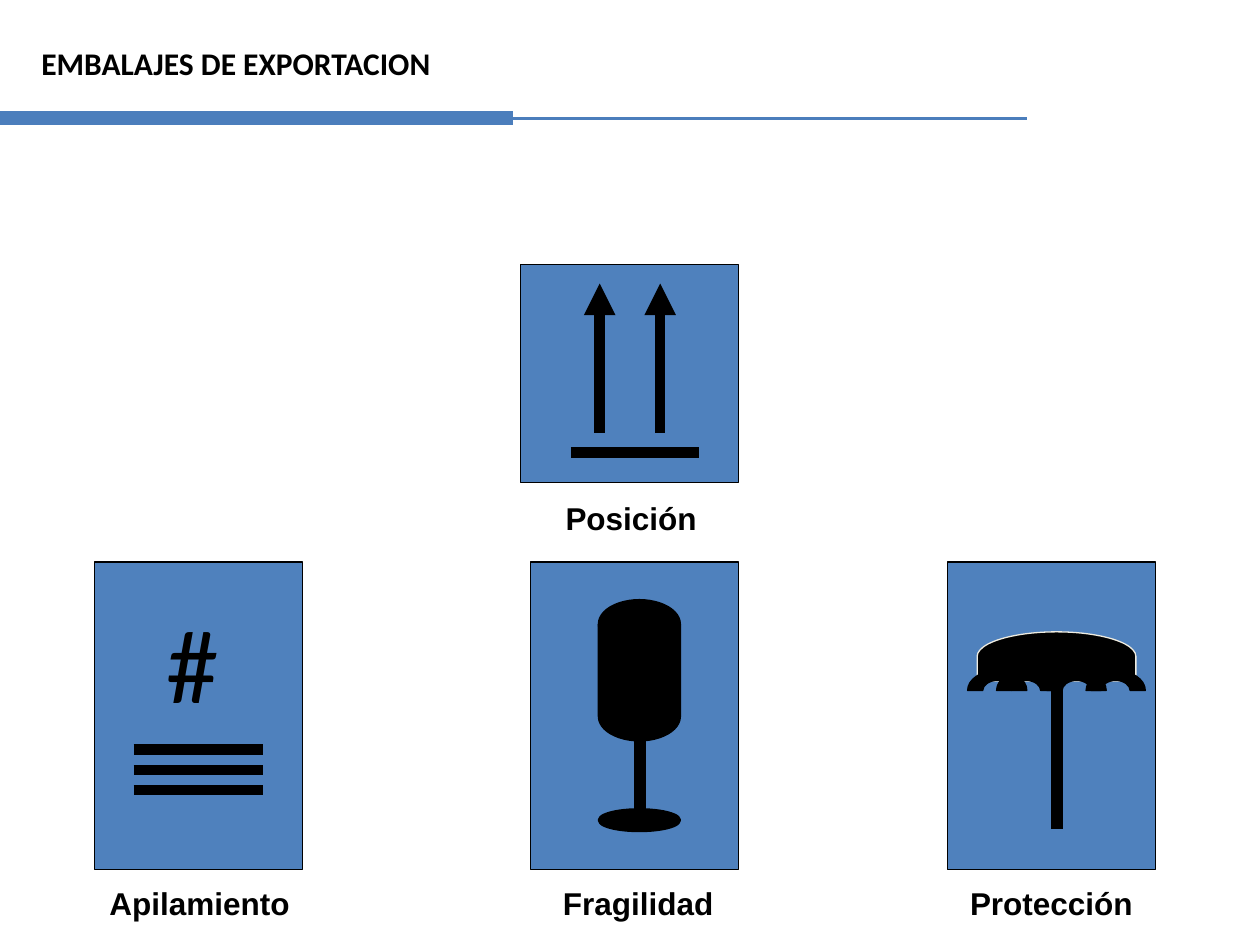
from lxml import etree
from pptx import Presentation
from pptx.dml.color import RGBColor
from pptx.enum import shapes, text
from pptx.oxml import ns
from pptx.util import Inches, Pt

BLACK = RGBColor(0x00, 0x00, 0x00)
PANEL = RGBColor(0x4F, 0x81, 0xBD)
RULE = RGBColor(0x4B, 0x7E, 0xBC)
CREAM = RGBColor(0xEE, 0xEC, 0xE1)
SHAPE = shapes.MSO_SHAPE

# Upper half of an elliptical ring, in hundredths of an inch
SCALLOP = [
    ("moveTo", [(12, 16)]),
    ("cubicBezTo", [(12, 12), (17, 8), (23.5, 8)]),
    ("cubicBezTo", [(30, 8), (35, 12), (35, 16)]),
    ("lnTo", [(47, 16)]),
    ("cubicBezTo", [(47, 7), (36, 0), (23.5, 0)]),
    ("cubicBezTo", [(11, 0), (0, 7), (0, 16)]),
    ("lnTo", [(12, 16)]),
    ("close", []),
]


def style(sp, fill, line, width):
    sp.shadow.inherit = False
    sp.fill.solid()
    sp.fill.fore_color.rgb = fill
    sp.line.color.rgb = line
    sp.line.width = Pt(width)


def add_block(s, kind, x, y, w, h, fill=BLACK, line=BLACK, width=0.75):
    sp = s.shapes.add_shape(kind, Inches(x), Inches(y), Inches(w), Inches(h))
    style(sp, fill, line, width)
    return sp


def add_line(s, x1, y1, x2, y2, width, color=BLACK, arrow=False):
    c = s.shapes.add_connector(shapes.MSO_CONNECTOR.STRAIGHT, Inches(x1),
                               Inches(y1), Inches(x2), Inches(y2))
    c.line.color.rgb = color
    c.line.width = Pt(width)
    if arrow:
        etree.SubElement(c.line._get_or_add_ln(), ns.qn("a:headEnd"), type="triangle")
    etree.SubElement(c._element.spPr, ns.qn("a:effectLst"))


def add_text(s, x, y, w, h, words, size=18, font="Arial", bold=True):
    tb = s.shapes.add_textbox(Inches(x), Inches(y), Inches(w), Inches(h))
    tf = tb.text_frame
    tf.word_wrap = False
    tf.auto_size = text.MSO_AUTO_SIZE.SHAPE_TO_FIT_TEXT
    p = tf.paragraphs[0]
    r = p.add_run()
    r.text = words
    r.font.size = Pt(size)
    r.font.name = font
    r.font.bold = bold
    r.font.color.rgb = BLACK


def add_scallop(s, x, y, w=0.47, h=0.31):
    fb = s.shapes.build_freeform(0, 0, scale=1.0)
    fb.add_line_segments([(Inches(w), 0), (Inches(w), Inches(h))])
    sp = fb.convert_to_shape(Inches(x), Inches(y))
    style(sp, BLACK, BLACK, 0.75)
    # Curved outline in place of the straight segments
    outline = sp._element.find(".//" + ns.qn("a:path"))
    for step in list(outline):
        outline.remove(step)
    for command, points in SCALLOP:
        step = etree.SubElement(outline, ns.qn("a:" + command))
        for px, py in points:
            etree.SubElement(step, ns.qn("a:pt"), x=str(Inches(px / 100)),
                             y=str(Inches(py / 100)))


def header(s, x, y, w):
    add_line(s, x, y + 0.94, x + w, y + 0.94, 1.75, RULE)
    add_line(s, x, y + 0.94, x + w / 2, y + 0.94, 8, RULE)
    add_text(s, x + 0.23, y + 0.3, 3.32, 0.4, "EMBALAJES DE EXPORTACION", font="Calibri")


def position_sign(s, x, y, w, h):
    # Two upward arrows on a base line
    add_line(s, x + 0.4, y + 1.49, x + 1.42, y + 1.49, 6)
    for dx in (0.63, 1.11):
        add_line(s, x + dx, y + 0.15, x + dx, y + 1.34, 6, arrow=True)


def stacking_sign(s, x, y, w, h):
    # Number mark over three stacked bars
    for i in range(3):
        bar_y = y + 1.49 + 0.16 * i
        add_line(s, x + 0.31, bar_y, x + 1.34, bar_y, 6)
    add_text(s, x + 0.47, y + 0.24, 0.66, 1.1, "#", 60, "Calibri", False)


def fragile_sign(s, x, y, w, h):
    # Glass: bowl, stem and foot
    add_block(s, SHAPE.FLOWCHART_MAGNETIC_DISK, x + 0.55, y + 0.31, 0.63, 1.1, width=2.25)
    add_line(s, x + 0.87, y + 1.97, x + 0.87, y + 1.02, 7)
    add_block(s, SHAPE.OVAL, x + 0.55, y + 1.97, 0.63, 0.16, width=2.25)


def protection_sign(s, x, y, w, h):
    # Umbrella: canopy, pole and scalloped edge
    canopy = add_block(s, SHAPE.FLOWCHART_DELAY, x + 0.67, y + 0.12, 0.39, 1.26, line=CREAM)
    canopy.rotation = 270
    canopy._element.spPr.xfrm.set("flipV", "1")
    add_line(s, x + 0.87, y + 2.12, x + 0.87, y + 0.86, 7)
    for dx in (0.16, 0.39, 0.79, 1.1):
        add_scallop(s, x + dx, y + 0.86)


# Box, drawing, caption, caption box
SIGNS = [
    ((0.75, 4.46, 1.65, 2.44), stacking_sign, "Apilamiento", (0.77, 6.97, 1.63, 0.4)),
    ((4.21, 4.46, 1.65, 2.44), fragile_sign, "Fragilidad", (4.37, 6.97, 1.4, 0.4)),
    ((7.52, 4.46, 1.65, 2.44), protection_sign, "Protección", (7.6, 6.97, 1.49, 0.4)),
    ((4.13, 2.1, 1.73, 1.73), position_sign, "Posición", (4.39, 3.91, 1.24, 0.4)),
]


def main():
    prs = Presentation()
    prs.slide_width, prs.slide_height = Inches(10), Inches(7.5)
    s = prs.slides.add_slide(prs.slide_layouts[6])
    for box, draw, caption, caption_box in SIGNS:
        add_block(s, SHAPE.RECTANGLE, *box, fill=PANEL)
        draw(s, *box)
        add_text(s, *caption_box, caption)
    header(s, 0, 0, 8.15)
    prs.save("out.pptx")


if __name__ == "__main__":
    main()
